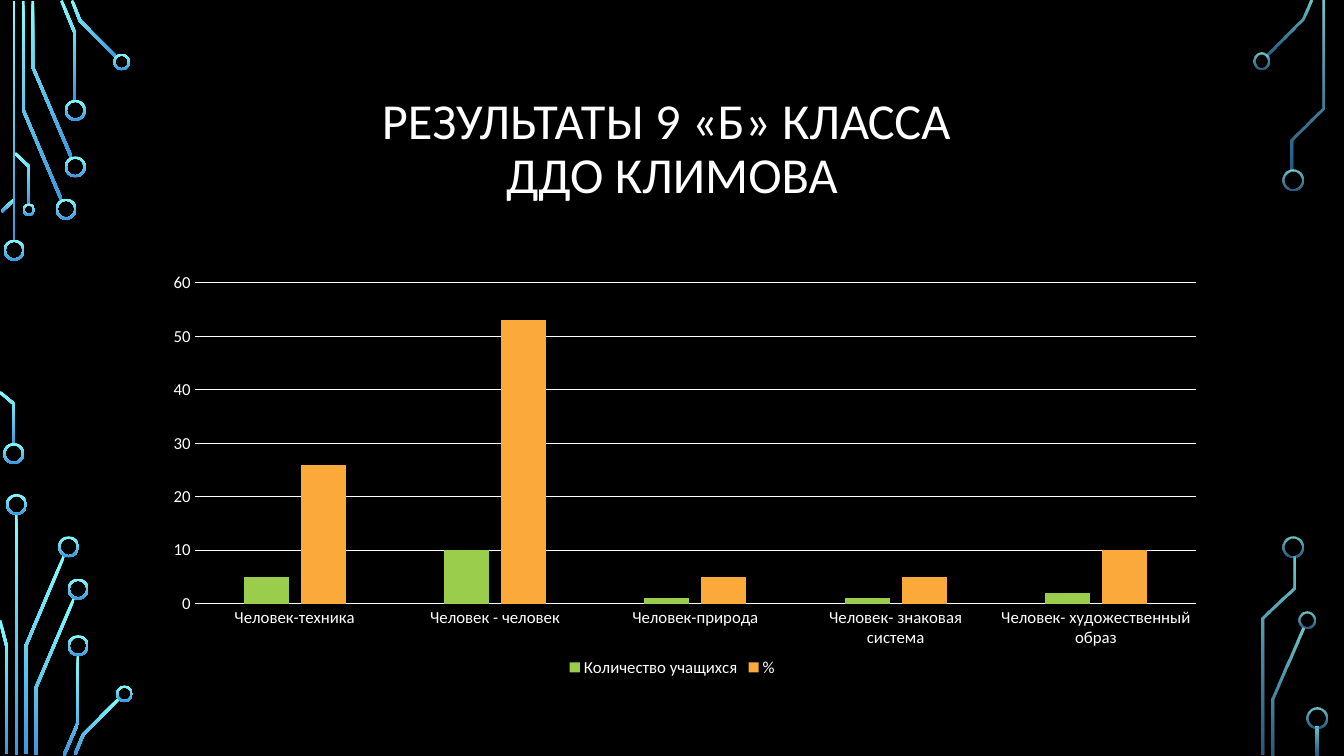
from math import hypot

from lxml.etree import SubElement
from pptx import Presentation
from pptx.chart.data import CategoryChartData
from pptx.dml.color import RGBColor
from pptx.enum.chart import XL_CHART_TYPE as ChartType, XL_LEGEND_POSITION as LegendPosition
from pptx.enum.chart import XL_TICK_MARK as TickMark
from pptx.enum.shapes import MSO_SHAPE as Preset
from pptx.enum.text import MSO_ANCHOR as Anchor, PP_ALIGN as Align
from pptx.oxml.ns import qn
from pptx.util import Pt

# Circuit lines as centre lines, in points
LEFT_TRACES = [
    [(43.9, 142.9), (16.6, 78.5), (16.6, 0.7)],
    [(51.1, 112.7), (23.4, 47.9), (23.4, 0.7)],
    [(53.6, 72), (53.6, 23.8), (43.9, 0.4)],
    [(83.2, 41), (57.2, 14.8), (51.5, 0.4)],
    [(1.1, 151.2), (10.1, 142.6)],
    [(10.1, 317.5), (10.1, 288.7), (0, 280.1)],
    [(20.9, 146.2), (20.9, 119.2), (10.8, 109.4)],
    [(18.4, 538.6), (18.4, 461.5), (45.7, 397.1)],
    [(4.7, 538.6), (4.7, 461.5), (0, 443.2)],
    [(25.6, 539.3), (25.6, 491.4), (52.9, 427.3)],
    [(45.7, 539.6), (55.8, 516.2), (55.8, 468)],
    [(53.6, 538.9), (59.4, 524.9), (85, 499)],
]
RIGHT_TRACES = [
    [(905, 40), (930.6, 14), (936.4, 0.4)],
    [(909, 539.3), (909, 499.3), (931, 448.9)],
    [(923, 121.7), (923, 99.7), (945, 77.4), (945, 0.7)],
    [(901.8, 539.3), (901.8, 441.7), (924.1, 420.1), (924.1, 397.4)],
]
# Upright bars: left, top, height
LEFT_BARS = [(9, 0.7, 172), (10.6, 367.2, 172)]
RIGHT_BARS = [(939.9, 519.1, 20.2)]
# Ring ends: centre x, centre y, diameter
LEFT_RINGS = [
    (10.1, 178.7, 15), (9.8, 324, 15), (47.2, 149.4, 15), (53.8, 119.2, 15),
    (53.8, 78.8, 15), (86.9, 44.3, 12), (20.6, 149.8, 9), (11.8, 360.4, 15),
    (49, 390.6, 15), (55.8, 420.8, 15), (55.8, 461.2, 15), (88.9, 495.6, 12),
]
RIGHT_RINGS = [
    (901.1, 43.6, 12), (923.4, 128.5, 15), (933.5, 443.2, 12),
    (923.8, 390.6, 15), (940.7, 512.6, 15),
]


def color(hex_value):
    return RGBColor.from_string(hex_value)


def outline(points, half_width):
    """Return the mitred outline of a centre line."""
    normals = []
    for (x1, y1), (x2, y2) in zip(points, points[1:]):
        length = hypot(x2 - x1, y2 - y1)
        normals.append(((y1 - y2) / length, (x2 - x1) / length))
    one_side, other_side = [], []
    for (x, y), (ax, ay), (bx, by) in zip(points, normals[:1] + normals, normals + normals[-1:]):
        reach = half_width / (1 + ax * bx + ay * by)
        dx, dy = (ax + bx) * reach, (ay + by) * reach
        one_side.append((x + dx, y + dy))
        other_side.append((x - dx, y - dy))
    return one_side + other_side[::-1]


class SlideBuilder:
    font = "Calibri"
    text = "FFFFFF"
    gradient = ("82FFFF", "3D97DE")
    stroke = 2
    ring_stroke = 1.5

    def __init__(self, slide):
        self.slide = slide
        slide.background.fill.solid()
        slide.background.fill.fore_color.rgb = color("000000")

    def style_font(self, font, size):
        font.name, font.size = self.font, Pt(size)
        font.color.rgb = color(self.text)

    def glow(self, shape, opacities):
        shape.shadow.inherit = False
        shape.line.fill.background()
        shape.fill.gradient()
        shape.fill.gradient_angle = 270
        for stop, hex_value in zip(shape.fill.gradient_stops, self.gradient):
            stop.color.rgb = color(hex_value)
        if opacities:
            for element, opacity in zip(shape.element.iter(qn("a:srgbClr")), opacities):
                SubElement(element, qn("a:alpha")).set("val", str(opacity * 1000))

    def trace(self, points, opacities):
        corners = [(Pt(x), Pt(y)) for x, y in outline(points, self.stroke / 2)]
        builder = self.slide.shapes.build_freeform(*corners[0])
        builder.add_line_segments(corners[1:], close=True)
        self.glow(builder.convert_to_shape(), opacities)

    def bar(self, left, top, height, opacities):
        shape = self.slide.shapes.add_shape(
            Preset.RECTANGLE, Pt(left), Pt(top), Pt(self.stroke), Pt(height))
        self.glow(shape, opacities)

    def ring(self, x, y, size, opacities):
        shape = self.slide.shapes.add_shape(
            Preset.DONUT, Pt(x - size / 2), Pt(y - size / 2), Pt(size), Pt(size))
        shape.adjustments[0] = self.ring_stroke / size
        self.glow(shape, opacities)

    def circuit(self, traces, bars, rings, opacities=None):
        for points in traces:
            self.trace(points, opacities)
        for bar in bars:
            self.bar(*bar, opacities)
        for ring in rings:
            self.ring(*ring, opacities)

    def title(self, lines, left, top, width, height):
        frame = self.slide.shapes.add_textbox(Pt(left), Pt(top), Pt(width), Pt(height)).text_frame
        frame.word_wrap = True
        frame.vertical_anchor = Anchor.MIDDLE
        paragraph = frame.paragraphs[0]
        paragraph.alignment = Align.CENTER
        paragraph.line_spacing = 0.9
        for index, line in enumerate(lines):
            if index:
                paragraph.add_line_break()
            run = paragraph.add_run()
            run.text = line
            self.style_font(run.font, 36)

    def column_chart(self, categories, series, left, top, width, height, plot_area):
        data = CategoryChartData()
        data.categories = categories
        for name, _, values in series:
            data.add_series(name, values)
        chart = self.slide.shapes.add_chart(
            ChartType.COLUMN_CLUSTERED, Pt(left), Pt(top), Pt(width), Pt(height), data).chart
        chart.has_title = False
        self.style_font(chart.font, 12)

        # Columns
        plot = chart.plots[0]
        plot.vary_by_categories = False
        plot.gap_width, plot.overlap = 219, -27
        for column, (_, fill, _) in zip(plot.series, series):
            column.format.fill.solid()
            column.format.fill.fore_color.rgb = color(fill)

        # Axes
        values_axis, category_axis = chart.value_axis, chart.category_axis
        values_axis.minimum_scale, values_axis.maximum_scale = 0, 60
        values_axis.major_unit = 10
        for axis in (values_axis, category_axis):
            axis.major_tick_mark = axis.minor_tick_mark = TickMark.NONE
            self.style_font(axis.tick_labels.font, 12)
        values_axis.format.line.fill.background()
        for line in (values_axis.major_gridlines.format.line, category_axis.format.line):
            line.color.rgb = color(self.text)
            line.width = Pt(0.75)

        # Legend
        chart.has_legend = True
        chart.legend.position = LegendPosition.BOTTOM
        chart.legend.include_in_layout = False
        self.style_font(chart.legend.font, 12)

        # Fixed inner plot area
        area = chart.element.find(".//" + qn("c:plotArea"))
        layout = area.find(qn("c:layout"))
        if layout is None:
            layout = SubElement(area, qn("c:layout"))
            area.insert(0, layout)
        manual = SubElement(layout, qn("c:manualLayout"))
        settings = [("layoutTarget", "inner"), ("xMode", "edge"), ("yMode", "edge")]
        for tag, value in settings + list(zip("xywh", plot_area)):
            SubElement(manual, qn("c:" + tag)).set("val", str(value))


def main():
    presentation = Presentation()
    presentation.slide_width, presentation.slide_height = Pt(960), Pt(540)
    builder = SlideBuilder(presentation.slides.add_slide(presentation.slide_layouts[6]))

    # Decoration at both edges
    builder.circuit(LEFT_TRACES, LEFT_BARS, LEFT_RINGS)
    builder.circuit(RIGHT_TRACES, RIGHT_BARS, RIGHT_RINGS, opacities=(80, 60))

    # Title and results
    builder.title(["РЕЗУЛЬТАТЫ 9 «Б» КЛАССА ", "ДДО КЛИМОВА"], 90, 49, 780, 116.6)
    builder.column_chart(
        ["Человек-техника", "Человек - человек", "Человек-природа",
         "Человек- знаковая система", "Человек- художественный образ"],
        [("Количество учащихся", "9ACD4C", (5, 10, 1, 1, 2)),
         ("%", "FAA93A", (26, 53, 5, 5, 10))],
        66.2, 133.2, 828, 353.5, plot_area=(0.088, 0.195, 0.864, 0.648))
    presentation.save("out.pptx")


if __name__ == "__main__":
    main()
